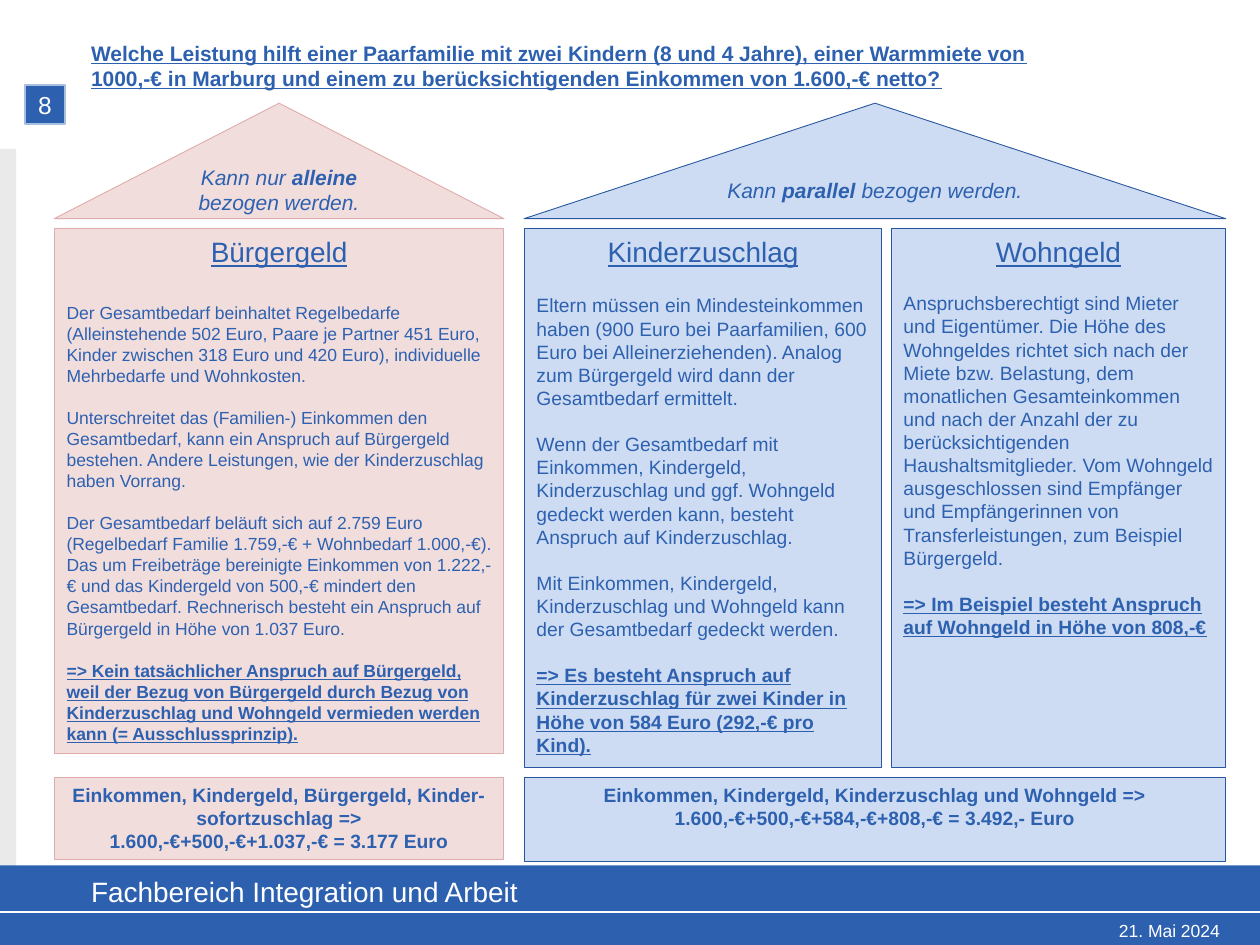
from pptx import Presentation
from pptx.dml.color import RGBColor
from pptx.enum.shapes import MSO_CONNECTOR, MSO_SHAPE as Shape
from pptx.enum.text import MSO_ANCHOR as Anchor, MSO_AUTO_SIZE as AutoSize, PP_ALIGN as Align
from pptx.oxml.ns import qn
from pptx.util import Pt

BLUE, WHITE, GREY = "2D61B0", "FFFFFF", "EAEAEA"
RED_STYLE = ("F2DDDD", "DFABAB")
BLUE_STYLE = ("CDDCF2", "28579F")

# Column and row grid
LEFT_X, LEFT_W = 31, 257
RIGHT_X, RIGHT_W = 299.5, 401
CHILD_W = 204.5
HOUSING_X, HOUSING_W = 509.2, 191.3
ROOF_Y, ROOF_H = 59, 66
BODY_Y, SUM_Y = 130.7, 444.2
LINE = 1.2  # line height relative to the font size

BUERGERGELD = [
    "Der Gesamtbedarf beinhaltet Regelbedarfe (Alleinstehende 502 Euro, Paare je Partner 451 Euro, "
    "Kinder zwischen 318 Euro und 420 Euro), individuelle Mehrbedarfe und Wohnkosten.",
    "Unterschreitet das (Familien-) Einkommen den Gesamtbedarf, kann ein Anspruch auf Bürgergeld "
    "bestehen. Andere Leistungen, wie der Kinderzuschlag haben Vorrang.",
    "Der Gesamtbedarf beläuft sich auf 2.759 Euro (Regelbedarf Familie 1.759,-€ + Wohnbedarf "
    "1.000,-€). Das um Freibeträge bereinigte Einkommen von 1.222,-€ und das Kindergeld von 500,-€ "
    "mindert den Gesamtbedarf. Rechnerisch besteht ein Anspruch auf Bürgergeld in Höhe von 1.037 Euro.",
    "=> Kein tatsächlicher Anspruch auf Bürgergeld, weil der Bezug von Bürgergeld durch Bezug von "
    "Kinderzuschlag und Wohngeld vermieden werden kann (= Ausschlussprinzip).",
]
KINDERZUSCHLAG = [
    "Eltern müssen ein Mindesteinkommen haben (900 Euro bei Paarfamilien, 600 Euro bei "
    "Alleinerziehenden). Analog zum Bürgergeld wird dann der Gesamtbedarf ermittelt.",
    "Wenn der Gesamtbedarf mit Einkommen, Kindergeld, Kinderzuschlag und ggf. Wohngeld gedeckt "
    "werden kann, besteht Anspruch auf Kinderzuschlag.",
    "Mit Einkommen, Kindergeld, Kinderzuschlag und Wohngeld kann der Gesamtbedarf gedeckt werden.",
    "=> Es besteht Anspruch auf Kinderzuschlag für zwei Kinder in Höhe von 584 Euro "
    "(292,-€ pro Kind).",
]
WOHNGELD = [
    "Anspruchsberechtigt sind Mieter und Eigentümer. Die Höhe des Wohngeldes richtet sich nach der "
    "Miete bzw. Belastung, dem monatlichen Gesamteinkommen und nach der Anzahl der zu "
    "berücksichtigenden Haushaltsmitglieder. Vom Wohngeld ausgeschlossen sind Empfänger und "
    "Empfängerinnen von Transferleistungen, zum Beispiel Bürgergeld.",
    "=> Im Beispiel besteht Anspruch auf Wohngeld in Höhe von 808,-€",
]


def rgb(value):
    return RGBColor.from_string(value)


def style(font, size, color=BLUE, bold=False, italic=False, underline=False):
    font.name, font.size = "Arial", Pt(size)
    font.color.rgb = rgb(color)
    font.bold, font.italic, font.underline = bold, italic, underline


def add_box(slide, kind, x, y, w, h, fill, line=None, width=0.5):
    s = slide.shapes.add_shape(kind, Pt(x), Pt(y), Pt(w), Pt(h))
    s.shadow.inherit = False
    s.fill.solid()
    s.fill.fore_color.rgb = rgb(fill)
    if line:
        s.line.color.rgb = rgb(line)
        s.line.width = Pt(width)
    else:
        s.line.fill.background()
    return s


def prepare(tf, anchor=Anchor.TOP, inset=None):
    tf.word_wrap = True
    tf.vertical_anchor = anchor
    if inset is not None:
        tf.margin_left = tf.margin_right = tf.margin_top = tf.margin_bottom = Pt(inset)


def write(p, text, size, align=Align.LEFT, before=0, **look):
    p.text = text
    p.alignment = align
    if before:
        p.space_before = Pt(before)
    style(p.runs[0].font, size, **look)


def add_label(slide, x, y, w, h, text, size, align=Align.LEFT, anchor=Anchor.TOP, **look):
    tf = slide.shapes.add_textbox(Pt(x), Pt(y), Pt(w), Pt(h)).text_frame
    prepare(tf, anchor, 3)
    write(tf.paragraphs[0], text, size, align, **look)


def add_roof(slide, x, w, colors, parts):
    s = add_box(slide, Shape.ISOSCELES_TRIANGLE, x, ROOF_Y, w, ROOF_H, *colors)
    prepare(s.text_frame, Anchor.MIDDLE)
    p = s.text_frame.paragraphs[0]
    p.alignment = Align.CENTER
    for i, text in enumerate(parts):  # the middle part is emphasised
        r = p.add_run()
        r.text = text
        style(r.font, 12, italic=True, bold=i == 1)


def add_benefit(slide, x, w, h, colors, heading, paragraphs, size, heading_gap):
    s = add_box(slide, Shape.RECTANGLE, x, BODY_Y, w, h, *colors)
    tf = s.text_frame
    prepare(tf)
    tf.auto_size = AutoSize.SHAPE_TO_FIT_TEXT
    write(tf.paragraphs[0], heading, 16, Align.CENTER, underline=True)
    for i, text in enumerate(paragraphs):
        result = text.startswith("=>")
        gap = (size if i else heading_gap) * LINE
        write(tf.add_paragraph(), text, size, before=gap, bold=result, underline=result)


def add_sum(slide, x, w, h, colors, sources, total):
    s = add_box(slide, Shape.RECTANGLE, x, SUM_Y, w, h, *colors)
    tf = s.text_frame
    prepare(tf)
    tf.auto_size = AutoSize.SHAPE_TO_FIT_TEXT
    write(tf.paragraphs[0], sources, 11, Align.CENTER, bold=True)
    write(tf.add_paragraph(), total, 11, Align.CENTER, bold=True)


def add_frame(slide):
    # Side strip, footer band and dividing line
    add_box(slide, Shape.RECTANGLE, 0, 85, 9.2, 414, GREY)
    add_box(slide, Shape.RECTANGLE, -1.2, 494.6, 721.2, 45.4, BLUE)
    c = slide.shapes.add_connector(MSO_CONNECTOR.STRAIGHT, Pt(0), Pt(521.2), Pt(720), Pt(521.2))
    c.line.color.rgb = rgb(WHITE)
    c.line.width = Pt(0.75)
    c._element.spPr.append(c._element.makeelement(qn("a:effectLst"), {}))

    # Footer texts and page number
    add_label(slide, 49, 497, 428, 22, "Fachbereich Integration und Arbeit", 16, color=WHITE)
    add_label(slide, 577.5, 522.7, 122.5, 17.3, "21. Mai 2024", 10, Align.RIGHT, color=WHITE)
    s = add_box(slide, Shape.RECTANGLE, 14.5, 48.5, 22.5, 22.5, BLUE, "A9BFDF", 1)
    prepare(s.text_frame, inset=3)
    write(s.text_frame.paragraphs[0], "8", 14, Align.CENTER, color=WHITE)


def main():
    prs = Presentation()
    prs.slide_width, prs.slide_height = Pt(720), Pt(540)
    slide = prs.slides.add_slide(prs.slide_layouts[6])
    add_frame(slide)

    # Question
    add_label(slide, 49, 9.5, 544.5, 56,
              "Welche Leistung hilft einer Paarfamilie mit zwei Kindern (8 und 4 Jahre), einer Warmmiete "
              "von 1000,-€ in Marburg und einem zu berücksichtigenden Einkommen von 1.600,-€ netto?",
              12, anchor=Anchor.MIDDLE, bold=True, underline=True)

    # Roofs
    add_roof(slide, LEFT_X, LEFT_W, RED_STYLE, ["Kann nur ", "alleine", " bezogen werden."])
    add_roof(slide, RIGHT_X, RIGHT_W, BLUE_STYLE, ["Kann ", "parallel ", "bezogen werden."])

    # Benefits
    add_benefit(slide, LEFT_X, LEFT_W, 300, RED_STYLE, "Bürgergeld", BUERGERGELD, 10, 16)
    add_benefit(slide, RIGHT_X, CHILD_W, 307.7, BLUE_STYLE, "Kinderzuschlag", KINDERZUSCHLAG, 11, 12)
    add_benefit(slide, HOUSING_X, HOUSING_W, 307.7, BLUE_STYLE, "Wohngeld", WOHNGELD, 11, 11)

    # Sums
    add_sum(slide, LEFT_X, LEFT_W, 47, RED_STYLE,
            "Einkommen, Kindergeld, Bürgergeld, Kinder-sofortzuschlag =>",
            "1.600,-€+500,-€+1.037,-€ = 3.177 Euro")
    add_sum(slide, RIGHT_X, RIGHT_W, 48, BLUE_STYLE,
            "Einkommen, Kindergeld, Kinderzuschlag und Wohngeld =>",
            "1.600,-€+500,-€+584,-€+808,-€ = 3.492,- Euro")

    prs.save("out.pptx")


if __name__ == "__main__":
    main()
